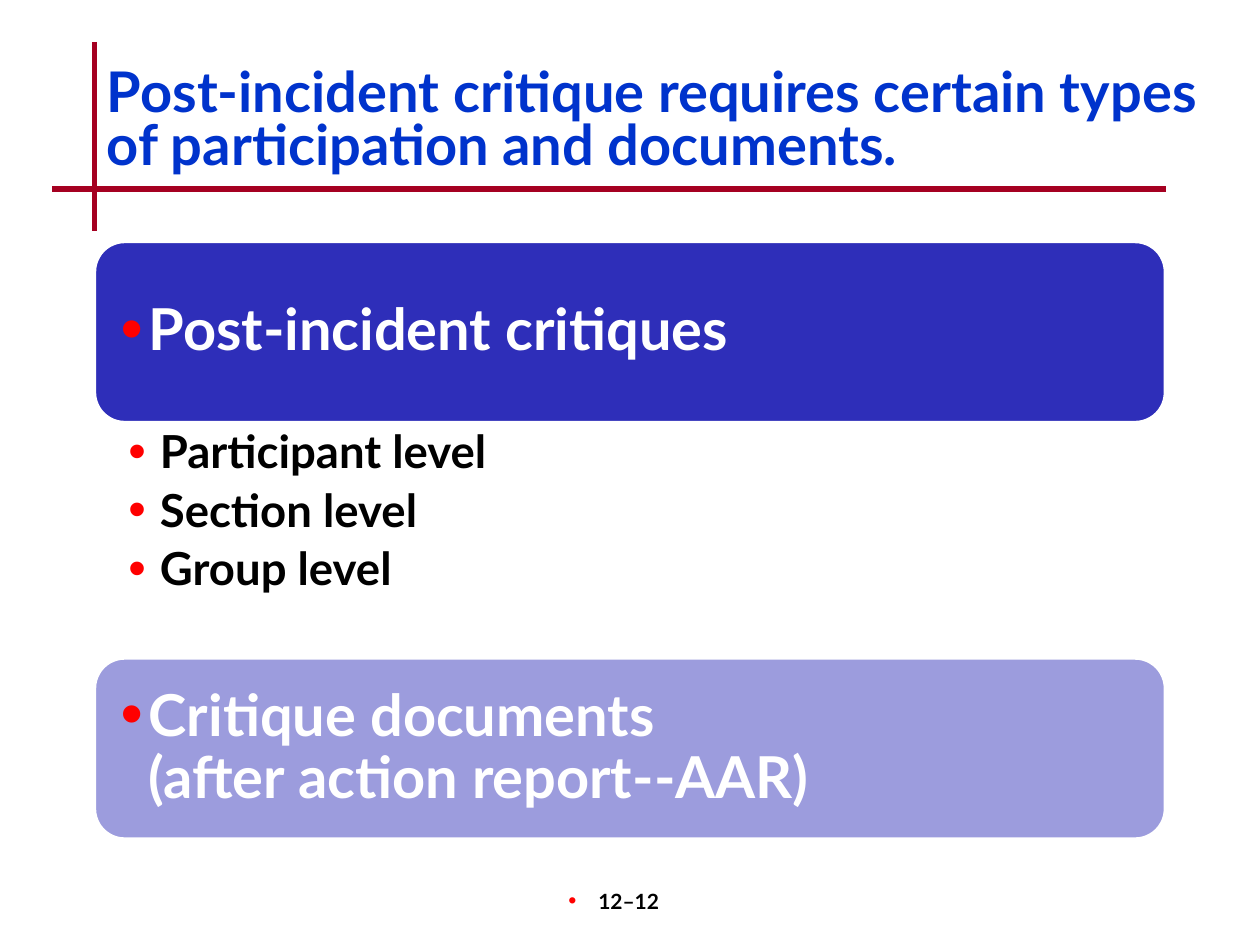
import pptx
import pptx.util
import pptx.dml.color
import pptx.enum.shapes
import pptx.enum.text
import pptx.oxml

Pt = pptx.util.Pt
ANCHOR = pptx.enum.text.MSO_ANCHOR
ALIGN = pptx.enum.text.PP_ALIGN
NAMESPACE = 'xmlns:a="http://schemas.openxmlformats.org/drawingml/2006/main"'


def color(value):
    return pptx.dml.color.RGBColor.from_string(value)


def add_text(slide, box, lines, size, text_color, insets=(7.2, 3.6), anchor=ANCHOR.TOP,
             bullet=None, **paragraph_format):
    shape = slide.shapes.add_textbox(*map(Pt, box))
    frame = shape.text_frame
    side, edge = map(Pt, insets)
    frame_format = {"word_wrap": True, "vertical_anchor": anchor, "margin_left": side,
                    "margin_right": side, "margin_top": edge, "margin_bottom": edge}
    for name, value in frame_format.items():
        setattr(frame, name, value)
    for index, line in enumerate(lines):
        paragraph = frame.paragraphs[0] if index == 0 else frame.add_paragraph()
        paragraph.text = line
        for name, value in paragraph_format.items():
            setattr(paragraph, name, value)
        if bullet:
            margin, indent = bullet
            properties = paragraph._p.get_or_add_pPr()
            properties.set("marL", str(Pt(margin)))
            properties.set("indent", str(Pt(indent)))
            for element in ('<a:buClr {}><a:srgbClr val="FF0000"/></a:buClr>',
                            '<a:buSzPct {} val="110000"/>',
                            '<a:buFont {} typeface="Arial"/>',
                            '<a:buChar {} char="•"/>'):
                properties.append(pptx.oxml.parse_xml(element.format(NAMESPACE)))
        for run in paragraph.runs:
            for name, value in {"name": "Lato", "size": Pt(size), "bold": True}.items():
                setattr(run.font, name, value)
            run.font.color.rgb = color(text_color)


presentation = pptx.Presentation()
presentation.slide_width = Pt(720)
presentation.slide_height = Pt(540)
slide = presentation.slides.add_slide(presentation.slide_layouts[6])

for ends in [(54, 24, 54, 132), (30, 108, 666, 108)]:
    rule = slide.shapes.add_connector(pptx.enum.shapes.MSO_CONNECTOR.STRAIGHT, *map(Pt, ends))
    rule.line.color.rgb = color("A50021")
    rule.line.width = Pt(3)
    rule._element.spPr.append(pptx.oxml.parse_xml(f"<a:effectLst {NAMESPACE}/>"))

add_text(slide, (54, 36, 666, 72),
         ["Post-incident critique requires certain types of participation and documents."],
         32, "0033CC", line_spacing=0.8)

left, width, height, inset = 54, 612, 103.5, 5
headings = [
    (138, "2E2EB9", "Post-incident critiques"),
    (376, "9C9CDD", "Critique documents\v(after action report--AAR)"),
]
for top, fill, heading in headings:
    panel = slide.shapes.add_shape(pptx.enum.shapes.MSO_SHAPE.ROUNDED_RECTANGLE,
                                   Pt(left), Pt(top), Pt(width), Pt(height))
    panel.shadow.inherit = False
    panel.fill.solid()
    panel.fill.fore_color.rgb = color(fill)
    panel.line.color.rgb = color("FFFFFF")
    panel.line.width = Pt(2)
    add_text(slide, (left + inset, top + inset, width - 2 * inset, height - 2 * inset),
             [heading], 33, "FFFFFF", insets=(10, 10), anchor=ANCHOR.MIDDLE,
             bullet=(16, -16), line_spacing=0.9)

add_text(slide, (left, 242, width, 133), ["Participant level", "Section level", "Group level"],
         26, "000000", insets=(19.4, 3.6), bullet=(18, -18),
         level=1, line_spacing=0.9, space_after=Pt(5.2))

add_text(slide, (282, 504, 150, 36), ["12–12"], 12, "000000",
         bullet=(4.5, -17), alignment=ALIGN.CENTER)

presentation.save("out.pptx")
